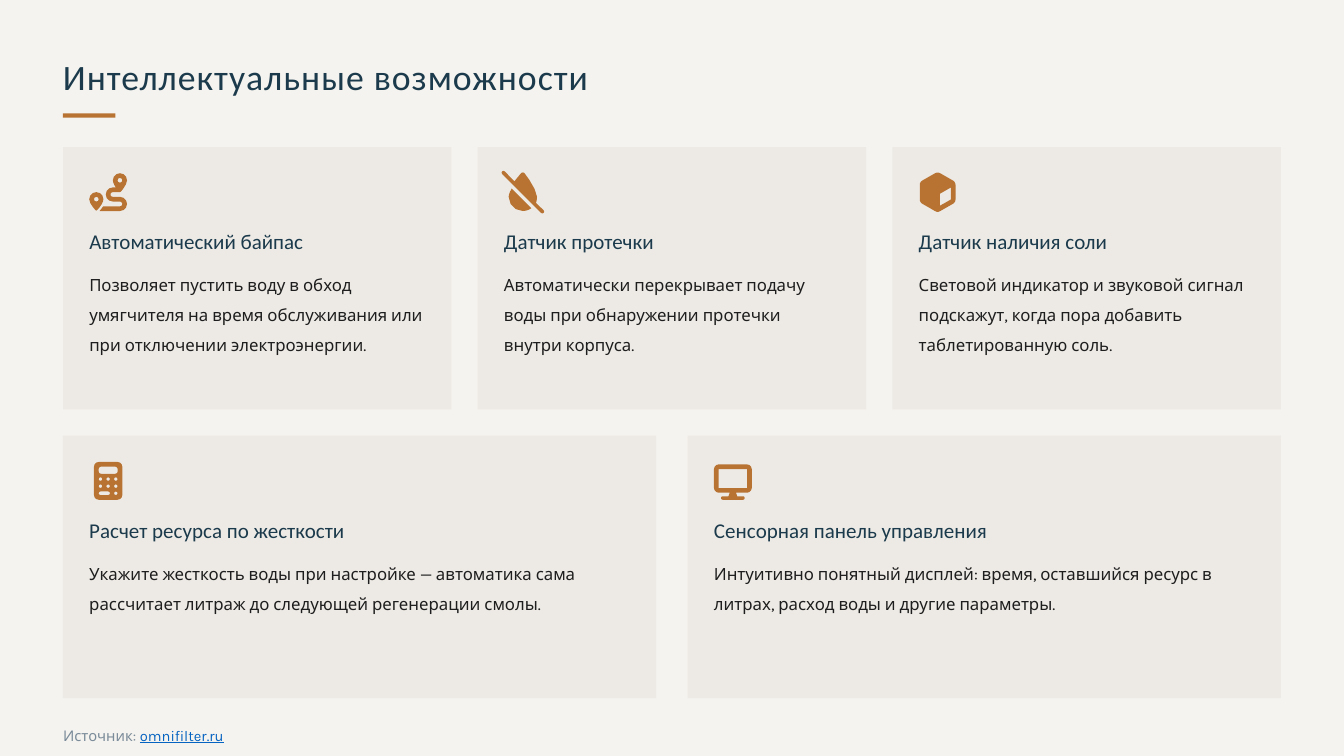
import math

from pptx import Presentation
from pptx.dml.color import RGBColor
from pptx.enum import shapes, text
from pptx.util import Emu, Pt

PX = 12700  # the page is 1280 x 720 px
ICON_SIZE, ICON_GRID = 36, 512
MARGIN, PADDING, CARD_HEIGHT = 60, 25, 250
TOP_ROW, BOTTOM_ROW = 140, 415


def px(length):
    return Emu(length * PX)


def colour(value):
    return RGBColor.from_string(value)


# An outline is a list of (x, y) for lines and six numbers for Bezier curves.
def rounded(x, y, width, height, radius):
    """Outline of a rectangle with rounded corners."""
    right, bottom, k = x + width, y + height, radius * 0.45
    return [(x + radius, y), (right - radius, y),
            (right - k, y, right, y + k, right, y + radius),
            (right, bottom - radius),
            (right, bottom - k, right - k, bottom, right - radius, bottom),
            (x + radius, bottom),
            (x + k, bottom, x, bottom - k, x, bottom - radius),
            (x, y + radius),
            (x, y + k, x + k, y, x + radius, y)]


def dot(x, y, radius, sides=8):
    """Outline of a circle small enough to be drawn with few sides."""
    angles = [2 * math.pi * side / sides for side in range(sides)]
    return [(x + radius * math.cos(a), y + radius * math.sin(a)) for a in angles]


def flatten(outline, steps=3):
    """Turn an outline into plain points."""
    points = []
    for part in outline:
        if len(part) == 2:
            points.append(part)
            continue
        x0, y0 = points[-1]
        x1, y1, x2, y2, x3, y3 = part
        for step in range(1, steps + 1):
            t = step / steps
            a, b, c, d = (1 - t) ** 3, 3 * t * (1 - t) ** 2, 3 * t * t * (1 - t), t ** 3
            points.append((a * x0 + b * x1 + c * x2 + d * x3,
                           a * y0 + b * y1 + c * y2 + d * y3))
    return points


ROUTE = [
    [(512, 96), (512, 146, 453, 221, 427, 251), (413, 256),
     (320, 256), (302, 256, 288, 270, 288, 288), (288, 306, 302, 320, 320, 320),
     (416, 320), (469, 320, 512, 363, 512, 416), (512, 469, 469, 512, 416, 512),
     (140, 512), (170, 475), (189, 448),
     (416, 448), (434, 448, 448, 434, 448, 416), (448, 398, 434, 384, 416, 384),
     (320, 384), (267, 384, 224, 341, 224, 288), (224, 235, 267, 192, 320, 192),
     (360, 192), (339, 160, 320, 124, 320, 96), (320, 43, 363, 0, 416, 0),
     (469, 0, 512, 43, 512, 96)],
    [(117, 489), (105, 502), (95, 506), (85, 500), (60, 473, 0, 402, 0, 352),
     (0, 299, 43, 256, 96, 256), (149, 256, 192, 299, 192, 352),
     (192, 382, 171, 419, 149, 450)],
    dot(96, 352, 32), dot(416, 96, 32),
]
DROP_SLASH = [
    [(9, -25), (0, -34, -16, -34, -25, -25), (-34, -16, -34, 0, -25, 9),
     (503, 537), (512, 546, 528, 546, 537, 537), (546, 528, 546, 512, 537, 503),
     (434, 400), (443, 376, 448, 349, 448, 320), (448, 240, 326, 54, 280, 2),
     (274, -6, 266, -10, 256, -10), (246, -10, 237, -6, 231, 2),
     (214, 20, 178, 64, 143, 109)],
    [(105, 207), (79, 250, 64, 290, 64, 320), (64, 426, 150, 512, 256, 512),
     (300, 512, 340, 497, 372, 474)],
]
CUBE = [
    [(224, -2), (244, -13, 268, -13, 288, -2), (466, 100),
     (486, 112, 498, 133, 498, 156), (498, 356), (498, 379, 486, 400, 466, 412),
     (288, 514), (268, 526, 244, 526, 224, 514), (46, 412),
     (26, 400, 14, 379, 14, 356), (14, 156), (14, 133, 26, 112, 46, 100)],
    [(434, 356), (434, 193), (288, 277), (288, 439)],
]
CALCULATOR = [
    rounded(64, 0, 384, 512, 64), rounded(128, 64, 256, 96, 32),
    *[dot(x, y, 24) for y in (232, 328) for x in (152, 256, 360)],
    rounded(128, 400, 152, 48, 24), dot(360, 424, 24),
]
DISPLAY = [
    [(64, 32), (448, 32), (483, 32, 512, 61, 512, 96), (512, 352),
     (512, 387, 483, 416, 448, 416), (299, 416), (315, 464), (392, 464),
     (405, 464, 416, 475, 416, 488), (416, 501, 405, 512, 392, 512), (120, 512),
     (107, 512, 96, 501, 96, 488), (96, 475, 107, 464, 120, 464), (197, 464),
     (213, 416), (64, 416), (29, 416, 0, 387, 0, 352), (0, 96),
     (0, 61, 29, 32, 64, 32)],
    [(64, 96), (448, 96), (448, 352), (64, 352)],
]


class Page:
    """Style of the deck and its current slide."""
    HEADING_FONT, BODY_FONT = "Calibri", "Karla"
    PAPER, CARD, COPPER = "F5F3EF", "EDEAE5", "B87333"
    NAVY, INK, GREY, LINK = "1B3A4B", "1E1E1E", "7A8B99", "0563C1"

    def __init__(self, deck):
        self.slide = deck.slides.add_slide(deck.slide_layouts[6])
        self.slide.background.fill.solid()
        self.slide.background.fill.fore_color.rgb = colour(self.PAPER)

    def paint(self, shape, fill):
        shape.shadow.inherit = False
        shape.fill.solid()
        shape.fill.fore_color.rgb = colour(fill)
        shape.line.fill.background()

    def rectangle(self, x, y, width, height, fill):
        shape = self.slide.shapes.add_shape(
            shapes.MSO_SHAPE.RECTANGLE, px(x), px(y), px(width), px(height))
        self.paint(shape, fill)

    def icon(self, x, y, outlines):
        first, *others = [flatten(outline) for outline in outlines]
        builder = self.slide.shapes.build_freeform(
            *first[0], scale=ICON_SIZE * PX / ICON_GRID)
        builder.add_line_segments(first[1:], close=True)
        for points in others:
            builder.move_to(*points[0])
            builder.add_line_segments(points[1:], close=True)
        self.paint(builder.convert_to_shape(px(x), px(y)), self.COPPER)

    def label(self, x, y, width, height, spans, size, font, wrap=True,
              middle=True, line_spacing=None, tracking=0):
        """Text box with one paragraph; spans are (words, colour, underlined)."""
        box = self.slide.shapes.add_textbox(px(x), px(y), px(width), px(height))
        frame = box.text_frame
        frame.word_wrap = wrap
        frame.margin_left = frame.margin_right = frame.margin_top = frame.margin_bottom = 0
        frame.vertical_anchor = text.MSO_ANCHOR.MIDDLE if middle else text.MSO_ANCHOR.TOP
        para = frame.paragraphs[0]
        if line_spacing:
            para.line_spacing = line_spacing
        for words, tint, underlined in spans:
            span = para.add_run()
            span.text = words
            span.font.size, span.font.name = Pt(size), font
            span.font.color.rgb = colour(tint)
            if underlined:
                span.font.underline = True
            if tracking:
                span.font._element.set("spc", str(tracking * 100))

    def card(self, x, y, width, body_height, outlines, heading, body):
        self.rectangle(x, y, width, CARD_HEIGHT, self.CARD)
        left, inner = x + PADDING, width - 2 * PADDING
        self.icon(left, y + PADDING, outlines)
        self.label(left, y + 75, inner, 30, [(heading, self.NAVY, False)], 20,
                   self.HEADING_FONT, wrap=False)
        self.label(left, y + 112, inner, body_height, [(body, self.INK, False)], 16,
                   self.BODY_FONT, middle=False, line_spacing=1.5)

    def row(self, y, width, gap, body_height, cards):
        for index, content in enumerate(cards):
            self.card(MARGIN + index * (width + gap), y, width, body_height, *content)


def main():
    deck = Presentation()
    deck.slide_width, deck.slide_height = px(1280), px(720)
    page = Page(deck)
    page.label(MARGIN, 50, 700, 46, [("Интеллектуальные возможности", page.NAVY, False)],
               34, page.HEADING_FONT, wrap=False, tracking=1)
    page.rectangle(MARGIN, 108, 50, 4, page.COPPER)
    page.row(TOP_ROW, 370, 25, 110, [
        (ROUTE, "Автоматический байпас",
         "Позволяет пустить воду в обход умягчителя на время обслуживания "
         "или при отключении электроэнергии."),
        (DROP_SLASH, "Датчик протечки",
         "Автоматически перекрывает подачу воды при обнаружении протечки внутри корпуса."),
        (CUBE, "Датчик наличия соли",
         "Световой индикатор и звуковой сигнал подскажут, когда пора добавить "
         "таблетированную соль."),
    ])
    page.row(BOTTOM_ROW, 565, 30, 60, [
        (CALCULATOR, "Расчет ресурса по жесткости",
         "Укажите жесткость воды при настройке — автоматика сама рассчитает литраж "
         "до следующей регенерации смолы."),
        (DISPLAY, "Сенсорная панель управления",
         "Интуитивно понятный дисплей: время, оставшийся ресурс в литрах, "
         "расход воды и другие параметры."),
    ])
    page.label(MARGIN, 685, 600, 24,
               [("Источник: ", page.GREY, False), ("omnifilter.ru", page.LINK, True)],
               14, page.BODY_FONT, line_spacing=1.4)
    deck.save("out.pptx")


if __name__ == "__main__":
    main()
